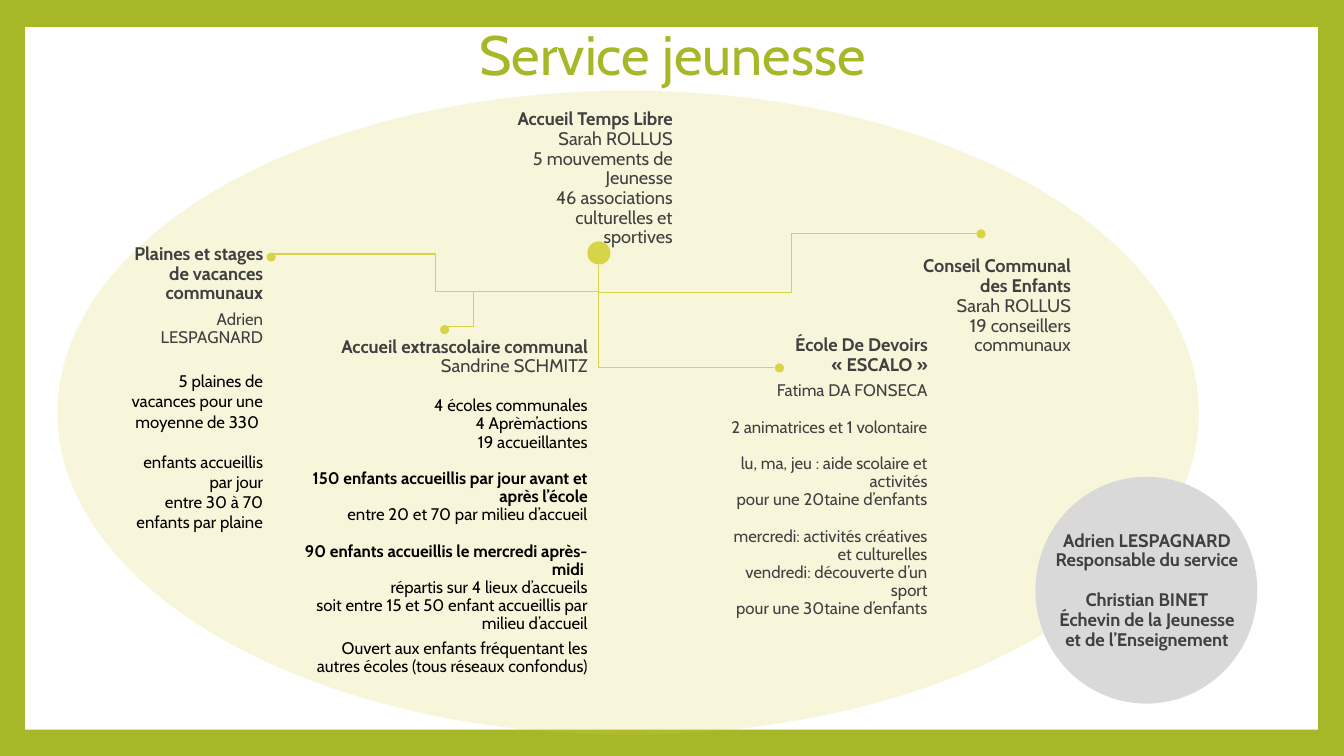
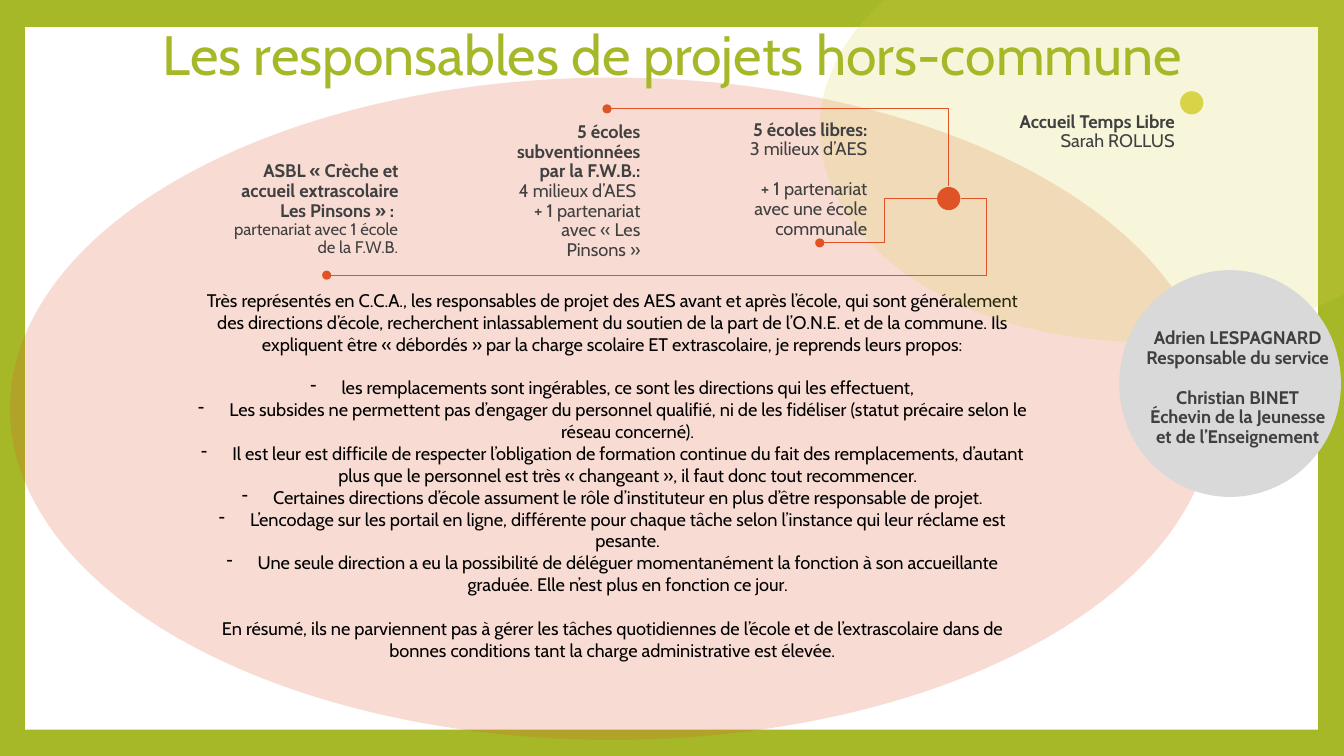
from collections import namedtuple

from lxml.etree import SubElement
from pptx import Presentation
from pptx.dml.color import RGBColor
from pptx.enum.shapes import MSO_CONNECTOR as LINK, MSO_SHAPE as SHAPE
from pptx.enum.text import MSO_ANCHOR as ANCHOR, MSO_AUTO_SIZE as AUTOSIZE, PP_ALIGN as ALIGN
from pptx.oxml.ns import qn
from pptx.util import Inches, Pt

# Shared look
FONT = "Cabin"
GREEN, YELLOW, ORANGE = "A6B727", "D7D447", "DF5327"
GREY, DARK, BLACK, WHITE = "D9D9D9", "404040", "000000", "FFFFFF"
HUB, END = 0.23, 0.09  # dot diameters

Style = namedtuple("Style", "size bold colour spacing")
HEAD = Style(13, True, DARK, 0.9)
PERSON = Style(13, False, DARK, 0.9)
DETAIL = Style(12, False, DARK, 0.9)
BODY = Style(12, False, BLACK, 0.9)
STRONG = Style(12, True, BLACK, 0.9)
LOOSE = Style(12, False, BLACK, 1.0)
PROSE = Style(13, False, BLACK, 1.0)

# Space before a paragraph, in points
TIGHT, LINE, WIDE = 5, 13, 14.5


def rgb(code):
    return RGBColor.from_string(code)


def inches(box):
    return [Inches(length) for length in box]


def add_area(slide, kind, box, colour, opacity=None):
    """Filled shape without outline or shadow."""
    area = slide.shapes.add_shape(kind, *inches(box))
    area.shadow.inherit = False
    area.line.fill.background()
    area.fill.solid()
    area.fill.fore_color.rgb = rgb(colour)
    if opacity is not None:
        tint = area.element.spPr.find(".//" + qn("a:srgbClr"))
        SubElement(tint, qn("a:alpha")).set("val", str(opacity * 1000))
    return area


def add_dot(slide, centre, size, colour):
    x, y = centre
    add_area(slide, SHAPE.OVAL, (x - size / 2, y - size / 2, size, size), colour)


def add_elbow(slide, start, end, colour, bend=0.5):
    """Elbow line; bend is the share of the width where it turns."""
    elbow = slide.shapes.add_connector(LINK.ELBOW, *inches(start + end))
    elbow.line.color.rgb = rgb(colour)
    elbow.line.width = Pt(0.79)
    props = elbow.element.spPr
    guides = props.find(qn("a:prstGeom")).find(qn("a:avLst"))
    guide = SubElement(guides, qn("a:gd"))
    guide.set("name", "adj1")
    guide.set("fmla", f"val {round(bend * 100000)}")
    SubElement(props, qn("a:effectLst"))


def set_run_font(paragraph, size, colour, bold=False):
    for run in paragraph.runs:
        font = run.font
        font.name, font.size, font.bold = FONT, Pt(size), bold
        font.color.rgb = rgb(colour)


def add_text(slide, box, lines, align=ALIGN.RIGHT, anchor=ANCHOR.MIDDLE):
    """Text box; each line is (text, style) or (text, style, space before)."""
    frame = slide.shapes.add_textbox(*inches(box)).text_frame
    frame.word_wrap = True
    frame.vertical_anchor = anchor
    frame.margin_left = frame.margin_right = frame.margin_top = frame.margin_bottom = 0
    for number, (text, style, *gap) in enumerate(lines):
        paragraph = frame.add_paragraph() if number else frame.paragraphs[0]
        paragraph.text = text
        paragraph.alignment = align
        paragraph.line_spacing = style.spacing
        paragraph.space_before = Pt(gap[0] if gap else 0)
        set_run_font(paragraph, style.size, style.colour, style.bold)
    return frame


def add_dash(paragraph):
    props = paragraph._p.get_or_add_pPr()
    props.set("marL", str(Inches(0.31)))
    props.set("indent", str(-Inches(0.31)))
    SubElement(props, qn("a:buChar")).set("char", "-")


def set_title(slide, text):
    title = slide.shapes.title
    title.left, title.top, title.width, title.height = inches((0.38, 0.25, 12.58, 0.65))
    frame = title.text_frame
    frame.text = text
    frame.auto_size = AUTOSIZE.NONE
    frame.vertical_anchor = ANCHOR.MIDDLE
    heading = frame.paragraphs[0]
    heading.alignment = ALIGN.CENTER
    heading.line_spacing = 0.9
    set_run_font(heading, 39.6, GREEN)
    slide.shapes.element.append(title.element)  # in front of the ovals


def add_managers(slide, left, top, inset):
    """Grey circle naming those in charge; inset places the names in it."""
    add_area(slide, SHAPE.OVAL, (left, top, 2.2, 2.25), GREY)
    dx, dy = inset
    add_text(slide, (left + dx, top + dy, 1.93, 1.18), [
        ("Adrien LESPAGNARD", HEAD),
        ("Responsable du service", HEAD),
        ("Christian BINET", HEAD, WIDE),
        ("Échevin de la Jeunesse et de l’Enseignement", HEAD),
    ], ALIGN.CENTER)


def set_backdrop(layout, slide):
    """Green background and white panel, kept on the layout."""
    layout.background.fill.solid()
    layout.background.fill.fore_color.rgb = rgb(GREEN)
    panel = add_area(slide, SHAPE.RECTANGLE, (0.25, 0.27, 12.82, 6.97), WHITE)
    layout.shapes.element.insert(2, panel.element)


def build_youth_service(slide):
    add_area(slide, SHAPE.OVAL, (0.57, 0.9, 11.32, 6.39), YELLOW, 20)
    add_managers(slide, 10.27, 4.73, (0.14, 0.54))
    set_title(slide, "Service jeunesse")

    # Services
    add_text(slide, (2.98, 3.35, 2.85, 3.36), [
        ("Accueil extrascolaire communal", HEAD),
        ("Sandrine SCHMITZ", PERSON),
        ("4 écoles communales", BODY, WIDE),
        ("4 Aprèm’actions", BODY),
        ("19 accueillantes", BODY),
        ("150 enfants accueillis par jour avant et après l’école", STRONG, LINE),
        ("entre 20 et 70 par milieu d’accueil", BODY),
        ("90 enfants accueillis le mercredi après-midi ", STRONG, LINE),
        ("répartis sur 4 lieux d’accueils", BODY),
        ("soit entre 15 et 50 enfant accueillis par milieu d’accueil", BODY),
        ("Ouvert aux enfants fréquentant les autres écoles (tous réseaux confondus)",
         BODY, TIGHT),
    ])
    add_text(slide, (1.28, 2.42, 1.33, 2.87), [
        ("Plaines et stages de vacances communaux", HEAD),
        ("Adrien LESPAGNARD", DETAIL, TIGHT),
        ("5 plaines de vacances pour une moyenne de 330 ", LOOSE, 17),
        ("enfants accueillis par jour", LOOSE, WIDE),
        ("entre 30 à 70 enfants par plaine", LOOSE),
    ])
    add_text(slide, (4.99, 1.09, 1.68, 1.37), [
        ("Accueil Temps Libre", HEAD),
        ("Sarah ROLLUS", PERSON),
        ("5 mouvements de Jeunesse", PERSON),
        ("46 associations culturelles et sportives", PERSON),
    ])
    add_text(slide, (7.1, 3.33, 2.1, 2.81), [
        ("École De Devoirs", HEAD),
        ("«\u00a0ESCALO\u00a0»", HEAD),
        ("Fatima DA FONSECA", DETAIL, TIGHT),
        ("2 animatrices et 1 volontaire", DETAIL, LINE),
        ("lu, ma, jeu : aide scolaire et activités", DETAIL, LINE),
        ("pour une 20taine d’enfants", DETAIL),
        ("mercredi: activités créatives et culturelles", DETAIL, LINE),
        ("vendredi: découverte d’un sport", DETAIL),
        ("pour une 30taine d’enfants", DETAIL),
    ])
    add_text(slide, (9.04, 2.55, 1.58, 0.98), [
        ("Conseil Communal des Enfants", HEAD),
        ("Sarah ROLLUS", PERSON),
        ("19 conseillers communaux", PERSON),
    ])

    # Network around the hub
    add_dot(slide, (5.94, 2.51), HUB, YELLOW)
    for centre in [(4.41, 3.27), (2.69, 2.55), (7.73, 3.65), (9.73, 2.32)]:
        add_dot(slide, centre, END, YELLOW)
    add_elbow(slide, (4.99, 2.89), (4.41, 3.24), YELLOW)
    add_elbow(slide, (5.94, 2.89), (2.69, 2.52), YELLOW)
    add_elbow(slide, (5.94, 2.9), (9.76, 2.32), YELLOW)
    add_elbow(slide, (7.68, 3.65), (5.94, 2.63), YELLOW, bend=1)


def build_outside_projects(slide):
    add_area(slide, SHAPE.OVAL, (0.1, 0.77, 11.94, 6.57), ORANGE, 20)

    # Message of the project leaders
    complaints = [
        "les remplacements sont ingérables, ce sont les directions qui les effectuent,",
        "Les subsides ne permettent pas d’engager du personnel qualifié, ni de les fidéliser "
        "(statut précaire selon le réseau concerné).",
        "Il est leur est difficile de respecter l’obligation de formation continue du fait des "
        "remplacements, d’autant plus que le personnel est très «\u00a0changeant\u00a0», "
        "il faut donc tout recommencer.",
        "Certaines directions d’école assument le rôle d’instituteur en plus d’être "
        "responsable de projet.",
        "L’encodage sur les portail en ligne, différente pour chaque tâche selon l’instance "
        "qui leur réclame est pesante.",
        "Une seule direction a eu la possibilité de déléguer momentanément la fonction à son "
        "accueillante graduée. Elle n’est plus en fonction ce jour.",
    ]
    message = add_text(slide, (1.95, 2.87, 8.24, 3.7), [
        ("Très représentés en C.C.A., les responsables de projet des AES avant et après l’école, "
         "qui sont généralement des directions d’école, recherchent inlassablement du soutien de "
         "la part de l’O.N.E. et de la commune. Ils expliquent être «\u00a0débordés\u00a0» par la "
         "charge scolaire ET extrascolaire, je reprends leurs propos:", PROSE),
        *[(text, PROSE, 0 if number else 15.6) for number, text in enumerate(complaints)],
        ("En résumé, ils ne parviennent pas à gérer les tâches quotidiennes de l’école et de "
         "l’extrascolaire dans de bonnes conditions tant la charge administrative est élevée.",
         PROSE, 15.6),
    ], ALIGN.CENTER, ANCHOR.TOP)
    for paragraph in message.paragraphs[1:-1]:
        add_dash(paragraph)

    add_area(slide, SHAPE.OVAL, (8.13, -0.84, 6.38, 4.23), YELLOW, 20)
    add_managers(slide, 11.1, 2.68, (0.21, 0.58))
    set_title(slide, "Les responsables de projets hors-commune")

    # Partners
    add_text(slide, (2.27, 1.6, 1.68, 0.96), [
        ("ASBL «\u00a0Crèche et accueil extrascolaire Les Pinsons\u00a0» : ", HEAD),
        ("partenariat avec 1 école de la F.W.B.", DETAIL),
    ])
    add_text(slide, (4.98, 1.21, 1.37, 1.38), [
        ("5 écoles subventionnées par la F.W.B.:", HEAD),
        ("4 milieux d’AES ", PERSON),
        ("+ 1 partenariat avec «\u00a0Les Pinsons\u00a0»", PERSON),
    ])
    add_text(slide, (9.97, 1.11, 1.68, 0.4), [
        ("Accueil Temps Libre", HEAD),
        ("Sarah ROLLUS", PERSON),
    ])
    add_text(slide, (7.42, 1.2, 1.18, 1.17), [
        ("5 écoles libres:", HEAD),
        ("3 milieux d’AES", PERSON),
        ("+ 1 partenariat avec une école communale", PERSON, WIDE),
    ])

    # Network around the hub
    add_elbow(slide, (9.41, 1.97), (8.13, 2.41), ORANGE)
    add_elbow(slide, (6.02, 1.08), (9.41, 1.85), ORANGE, bend=1)
    add_elbow(slide, (9.53, 1.97), (3.24, 2.73), ORANGE, bend=-0.04)
    add_dot(slide, (9.41, 1.97), HUB, ORANGE)
    for centre in [(8.13, 2.41), (6.02, 1.08), (3.24, 2.73)]:
        add_dot(slide, centre, END, ORANGE)
    add_dot(slide, (11.82, 1.02), HUB, YELLOW)


def main():
    deck = Presentation()
    deck.slide_width, deck.slide_height = Inches(13.33), Inches(7.5)
    title_only = deck.slide_layouts[5]
    youth, outside = [deck.slides.add_slide(title_only) for _ in range(2)]
    set_backdrop(title_only, youth)
    build_youth_service(youth)
    build_outside_projects(outside)
    deck.save("out.pptx")


if __name__ == "__main__":
    main()
